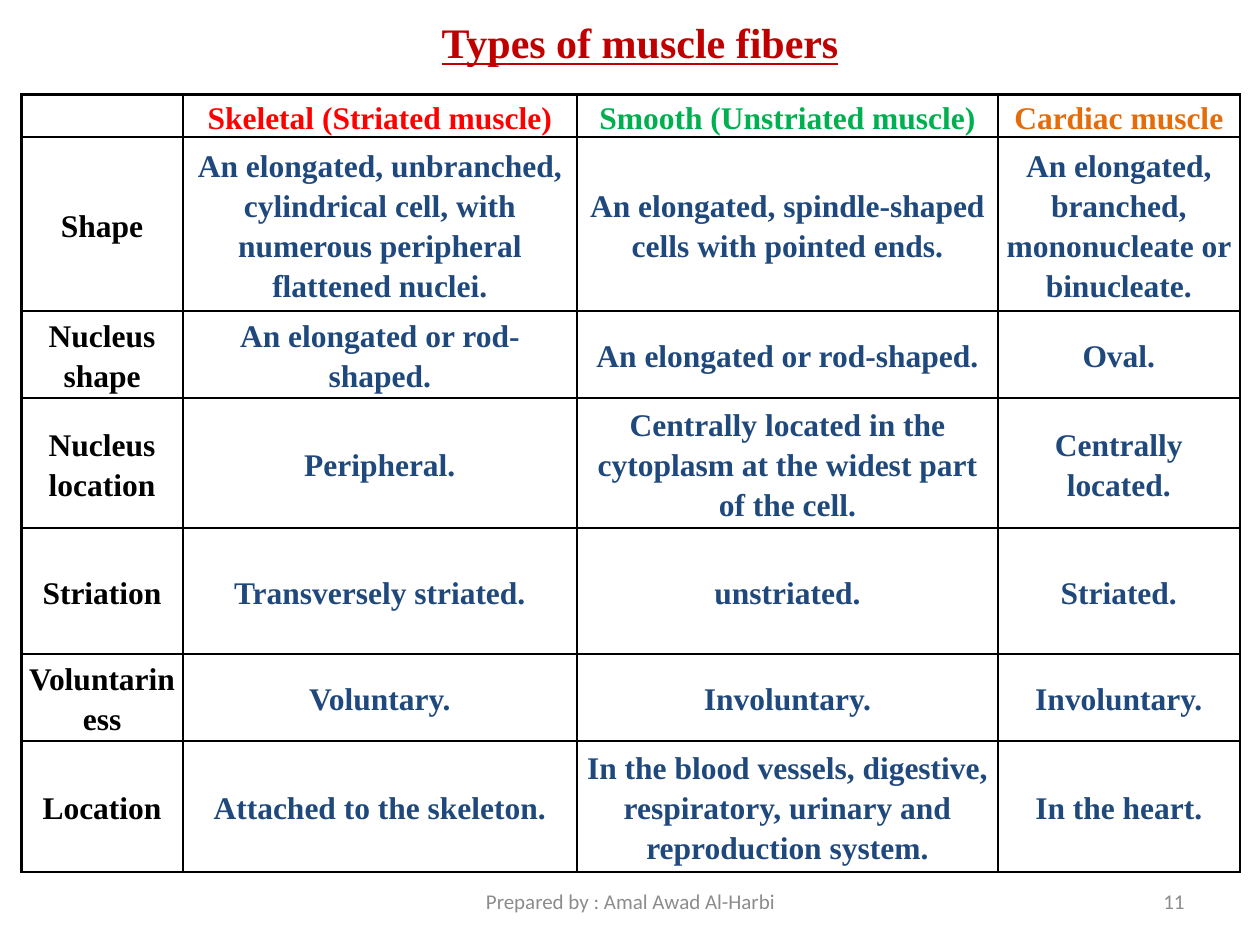
import pptx
import pptx.util
import pptx.dml.color
import pptx.enum.text
import pptx.oxml
import pptx.oxml.ns
from pptx.util import Inches

RGBColor = pptx.dml.color.RGBColor
DARK_RED = RGBColor(0xC0, 0x00, 0x00)
RED = RGBColor(0xFF, 0x00, 0x00)
GREEN = RGBColor(0x00, 0xB0, 0x50)
ORANGE = RGBColor(0xE4, 0x6C, 0x0A)
BLACK = RGBColor(0x00, 0x00, 0x00)
NAVY = RGBColor(0x1F, 0x49, 0x7D)
GRAY = RGBColor(0x8C, 0x8C, 0x8C)
ALIGN = pptx.enum.text.PP_ALIGN
MIDDLE = pptx.enum.text.MSO_ANCHOR.MIDDLE

HEADER_COLORS = [BLACK, RED, GREEN, ORANGE]
FIBER_ROWS = [
    ["", "Skeletal (Striated muscle)", "Smooth (Unstriated muscle)", "Cardiac muscle"],
    ["Shape",
     "An elongated, unbranched, cylindrical cell, with numerous peripheral flattened nuclei.",
     "An elongated, spindle-shaped cells with pointed ends.",
     "An elongated, branched, mononucleate or binucleate."],
    ["Nucleus shape", "An elongated or rod-shaped.", "An elongated or rod-shaped.", "Oval."],
    ["Nucleus location", "Peripheral.",
     "Centrally located in the cytoplasm at the widest part of the cell.",
     "Centrally located."],
    ["Striation", "Transversely striated.", "unstriated.", "Striated."],
    ["Voluntariness", "Voluntary.", "Involuntary.", "Involuntary."],
    ["Location", "Attached to the skeleton.",
     "In the blood vessels, digestive, respiratory, urinary and reproduction system.",
     "In the heart."],
]
COLUMN_WIDTHS = [1.28, 3.13, 3.34, 1.92]
ROW_HEIGHTS = [0.34, 1.38, 0.69, 1.03, 1, 0.69, 1.04]


def write(frame, text, size, font_name, color, align=ALIGN.CENTER, bold=False):
    """Fill a text frame with one formatted paragraph and return it."""
    frame.text = text
    paragraph = frame.paragraphs[0]
    paragraph.alignment = align
    for run in paragraph.runs:
        run.font.size = pptx.util.Pt(size)
        run.font.name = font_name
        run.font.bold = bold
        run.font.color.rgb = color
    return paragraph


def add_borders(cell):
    properties = cell._tc.get_or_add_tcPr()
    for position, side in enumerate(["lnL", "lnR", "lnT", "lnB"]):
        properties.insert(position, pptx.oxml.parse_xml(
            f'<a:{side} {pptx.oxml.ns.nsdecls("a")} w="{pptx.util.Pt(1.5)}">'
            '<a:solidFill><a:srgbClr val="000000"/></a:solidFill>'
            f'</a:{side}>'))


prs = pptx.Presentation()
prs.slide_width = Inches(10)
prs.slide_height = Inches(7.5)
slide = prs.slides.add_slide(prs.slide_layouts[5])

# Title
title = slide.shapes.title
title.left, title.top = Inches(3.33), Inches(0.08)
title.width, title.height = Inches(3.5), Inches(0.51)
title.text_frame.vertical_anchor = MIDDLE
heading = write(title.text_frame, "Types of muscle fibers", 24, "Times New Roman",
                DARK_RED, bold=True)
heading.runs[0].font.underline = True

# Comparison table
table = slide.shapes.add_table(
    len(FIBER_ROWS), len(COLUMN_WIDTHS),
    Inches(0.17), Inches(0.75), Inches(9.67), Inches(6.18)).table
for column, width in zip(table.columns, COLUMN_WIDTHS):
    column.width = Inches(width)
for row, height in zip(table.rows, ROW_HEIGHTS):
    row.height = Inches(height)

for r, texts in enumerate(FIBER_ROWS):
    for c, text in enumerate(texts):
        cell = table.cell(r, c)
        cell.fill.background()
        cell.vertical_anchor = MIDDLE
        cell.margin_left = cell.margin_right = Inches(0.05)
        cell.margin_top = cell.margin_bottom = 0
        if r == 0:
            color = HEADER_COLORS[c]
        else:
            color = BLACK if c == 0 else NAVY
        paragraph = write(cell.text_frame, text, 18, "Times New Roman", color, bold=True)
        paragraph.line_spacing = 1.15
        add_borders(cell)

# Footer and slide number
for text, left, width, align in [
    ("Prepared by : Amal Awad Al-Harbi", 3.42, 3.17, ALIGN.CENTER),
    ("11", 7.17, 2.33, ALIGN.RIGHT),
]:
    footer = slide.shapes.add_textbox(Inches(left), Inches(6.95), Inches(width), Inches(0.4))
    footer.text_frame.word_wrap = True
    footer.text_frame.vertical_anchor = MIDDLE
    write(footer.text_frame, text, 12, "Calibri", GRAY, align)

prs.save("out.pptx")
